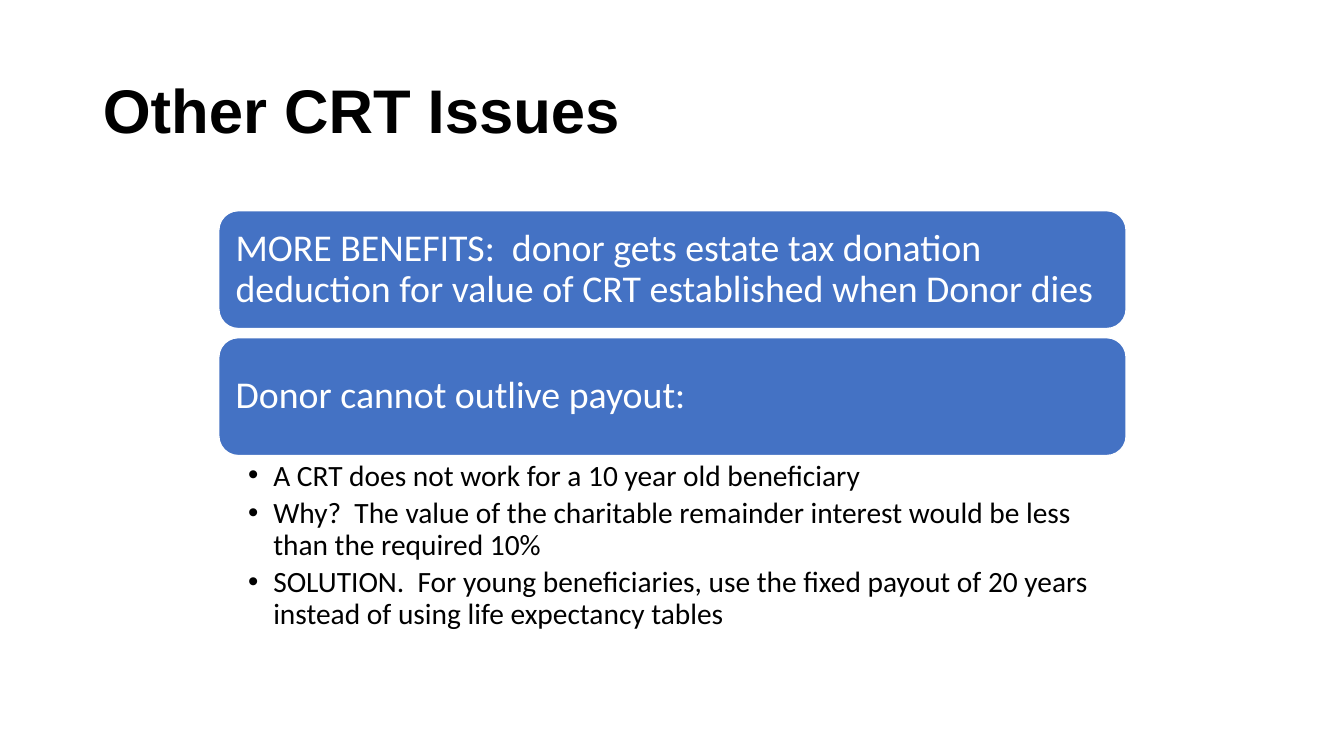
from pptx import Presentation
from pptx.dml.color import RGBColor
from pptx.enum.shapes import MSO_SHAPE as Preset
from pptx.enum.text import MSO_ANCHOR as Anchor, MSO_AUTO_SIZE as AutoSize, PP_ALIGN as Align
from pptx.util import Emu, Pt

THEME = {
    "title": {"font": "Arial", "size": 44, "color": "000000", "bold": True},
    "issue": {"font": "Calibri", "size": 27, "color": "FFFFFF", "bold": False},
    "detail": {"font": "Calibri", "size": 21, "color": "000000", "bold": False},
    "bar": "4472C4",
    "edge": "FFFFFF",
}
PX = 9144
BAR_LEFT, BAR_TOP, BAR_WIDTH, BAR_HEIGHT, BAR_STEP = 217, 209, 900, 117, 126

ISSUES = [
    "MORE BENEFITS:  donor gets estate tax donation deduction for value of CRT established when Donor dies",
    "Donor cannot outlive payout:",
]
DETAILS = [
    "A CRT does not work for a 10 year old beneficiary",
    "Why?  The value of the charitable remainder interest would be less than the required 10%",
    "SOLUTION.  For young beneficiaries, use the fixed payout of 20 years instead of using life expectancy tables",
]


def place(part, left, top, width, height):
    part.left, part.top = Emu(left * PX), Emu(top * PX)
    part.width, part.height = Emu(width * PX), Emu(height * PX)


def write(part, lines, style, anchor, insets, gap=0):
    frame = part.text_frame
    frame.word_wrap = True
    frame.auto_size = AutoSize.NONE
    frame.vertical_anchor = anchor
    frame.margin_left, frame.margin_top, frame.margin_right, frame.margin_bottom = (
        Emu(inset * PX) for inset in insets
    )
    frame.text = "\n".join(lines)
    for paragraph in frame.paragraphs:
        paragraph.alignment = Align.LEFT
        paragraph.line_spacing = 0.9
        paragraph.space_before = Pt(0)
        paragraph.space_after = Pt(gap)
        paragraph.font.name = style["font"]
        paragraph.font.size = Pt(style["size"])
        paragraph.font.bold = style["bold"]
        paragraph.font.color.rgb = RGBColor.from_string(style["color"])


deck = Presentation()
deck.slide_width, deck.slide_height = Emu(1333 * PX), Emu(750 * PX)
slide = deck.slides.add_slide(deck.slide_layouts[1])

title = slide.shapes.title
place(title, 92, 40, 1150, 145)
write(title, ["Other CRT Issues"], THEME["title"], Anchor.MIDDLE, (10, 5, 10, 5))

for row, issue in enumerate(ISSUES):
    bar = slide.shapes.add_shape(Preset.ROUNDED_RECTANGLE, 0, 0, 0, 0)
    place(bar, BAR_LEFT, BAR_TOP + row * BAR_STEP, BAR_WIDTH, BAR_HEIGHT)
    bar.shadow.inherit = False
    bar.fill.solid()
    bar.fill.fore_color.rgb = RGBColor.from_string(THEME["bar"])
    bar.line.color.rgb = RGBColor.from_string(THEME["edge"])
    bar.line.width = Pt(1)
    write(bar, [issue], THEME["issue"], Anchor.MIDDLE, (11, 11, 11, 11))

details = slide.placeholders[1]
place(details, BAR_LEFT, 453, BAR_WIDTH, 183)
write(details, DETAILS, THEME["detail"], Anchor.TOP, (29, 4, 21, 4), gap=4)
for paragraph in details.text_frame.paragraphs:
    properties = paragraph._p.get_or_add_pPr()
    properties.set("marL", str(25 * PX))
    properties.set("indent", str(-25 * PX))

deck.save("out.pptx")
